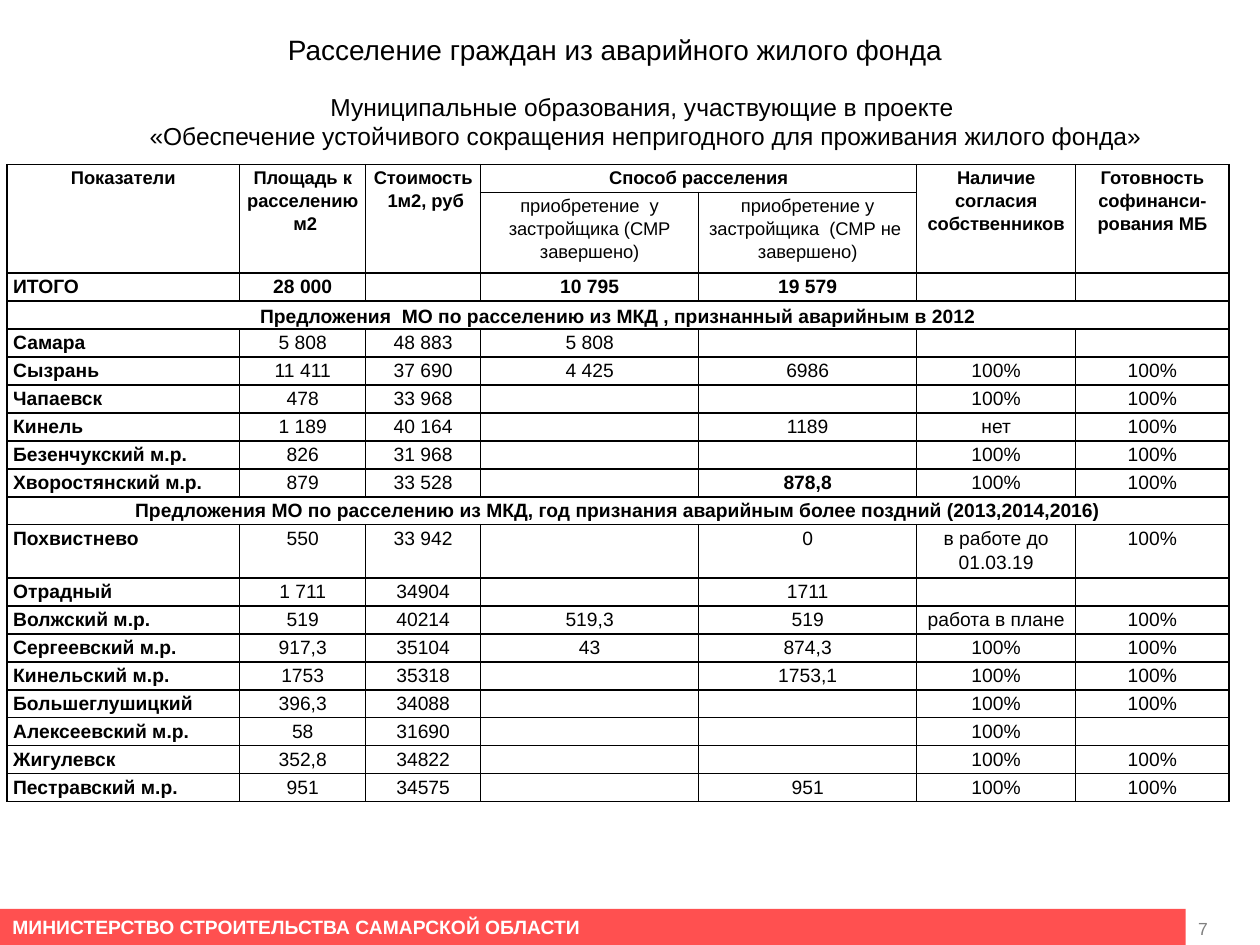
from typing import NamedTuple

from lxml.etree import SubElement
from pptx import Presentation
from pptx.dml.color import RGBColor
from pptx.enum.shapes import MSO_SHAPE
from pptx.enum.text import MSO_ANCHOR, PP_ALIGN
from pptx.oxml.ns import qn
from pptx.util import Pt

COLORS = {"text": "000000", "banner": "FF5050", "light": "FFFFFF", "number": "808080"}
FONT = "Arial"
COLUMN_WIDTHS = [133.1, 72, 65.7, 124.6, 124.6, 90.8, 87.8]
ROW_HEIGHT = 16


class Row(NamedTuple):
    values: list[str]
    height: float = ROW_HEIGHT
    size: float = 11
    bold_columns: tuple[int, ...] = (0,)
    section: bool = False
    anchor: MSO_ANCHOR = MSO_ANCHOR.TOP


ALL_COLUMNS = tuple(range(len(COLUMN_WIDTHS)))


def section(title: str, anchor: MSO_ANCHOR = MSO_ANCHOR.TOP) -> Row:
    return Row([title] + [""] * 6, section=True, anchor=anchor)


ROWS = [
    Row(["Показатели", "Площадь к расселению  м2", "Стоимость  1м2, руб", "Способ расселения", "",
         "Наличие согласия собственников", "Готовность софинанси-рования МБ"],
        size=10.5, bold_columns=ALL_COLUMNS),
    Row(["", "", "", "приобретение  у застройщика (СМР завершено)",
         "приобретение у застройщика  (СМР не  завершено)", "", ""], height=46, size=10.5),
    Row(["ИТОГО", "28 000", "", "10 795", "19 579", "", ""], bold_columns=ALL_COLUMNS),
    section("Предложения  МО по расселению из МКД , признанный аварийным в 2012", MSO_ANCHOR.MIDDLE),
    Row(["Самара", "5 808", "48 883", "5 808", "", "", ""]),
    Row(["Сызрань", "11 411", "37 690", "4 425", "6986", "100%", "100%"]),
    Row(["Чапаевск", "478", "33 968", "", "", "100%", "100%"]),
    Row(["Кинель", "1 189", "40 164", "", "1189", "нет", "100%"]),
    Row(["Безенчукский м.р.", "826", "31 968", "", "", "100%", "100%"]),
    Row(["Хворостянский м.р.", "879", "33 528", "", "878,8", "100%", "100%"], bold_columns=(0, 4)),
    section("Предложения МО по расселению из МКД, год признания аварийным более поздний (2013,2014,2016)"),
    Row(["Похвистнево", "550", "33 942", "", "0", "в работе до 01.03.19", "100%"], height=30.3),
    Row(["Отрадный", "1 711", "34904", "", "1711", "", ""]),
    Row(["Волжский м.р.", "519", "40214", "519,3", "519", "работа в плане", "100%"]),
    Row(["Сергеевский м.р.", "917,3", "35104", "43", "874,3", "100%", "100%"]),
    Row(["Кинельский м.р.", "1753", "35318", "", "1753,1", "100%", "100%"]),
    Row(["Большеглушицкий", "396,3", "34088", "", "", "100%", "100%"]),
    Row(["Алексеевский м.р.", "58", "31690", "", "", "100%", ""]),
    Row(["Жигулевск", "352,8", "34822", "", "", "100%", "100%"]),
    Row(["Пестравский м.р.", "951", "34575", "", "951", "100%", "100%"]),
]


def style_paragraph(paragraph, size: float, color: str = "text", bold: bool = False,
                    align: PP_ALIGN = PP_ALIGN.LEFT) -> None:
    paragraph.alignment = align
    font = paragraph.font
    font.name = FONT
    font.size = Pt(size)
    font.bold = bold
    font.color.rgb = RGBColor.from_string(COLORS[color])


def fill_frame(frame, lines: list[str], size: float, color: str = "text", bold: bool = False,
               align: PP_ALIGN = PP_ALIGN.LEFT, anchor: MSO_ANCHOR = MSO_ANCHOR.TOP,
               wrap: bool = True) -> None:
    frame.word_wrap = wrap
    frame.vertical_anchor = anchor
    frame.text = "\n".join(lines)
    for paragraph in frame.paragraphs:
        style_paragraph(paragraph, size, color, bold, align)


def add_borders(cell) -> None:
    properties = cell._tc.get_or_add_tcPr()
    for side in ("a:lnL", "a:lnR", "a:lnT", "a:lnB"):
        line = SubElement(properties, qn(side), w=str(Pt(1)))
        SubElement(SubElement(line, qn("a:solidFill")), qn("a:srgbClr"), val=COLORS["text"])


def draw_cell(cell, row: Row, column: int) -> None:
    add_borders(cell)
    cell.fill.background()
    cell.margin_left = cell.margin_right = Pt(3.6)
    cell.margin_top = cell.margin_bottom = 0
    cell.vertical_anchor = row.anchor
    cell.text = row.values[column]
    paragraph = cell.text_frame.paragraphs[0]
    paragraph.line_spacing = 1.15
    left = column == 0 and not row.section and row.size == 11
    style_paragraph(paragraph, row.size, bold=column in row.bold_columns,
                    align=PP_ALIGN.LEFT if left else PP_ALIGN.CENTER)
    if not row.values[column]:
        paragraph._p.get_or_add_endParaRPr().set("sz", str(int(row.size * 100)))


def draw_table(page) -> None:
    frame = page.shapes.add_table(len(ROWS), len(COLUMN_WIDTHS), Pt(3.9), Pt(94),
                                  Pt(sum(COLUMN_WIDTHS)), Pt(sum(row.height for row in ROWS)))
    table = frame.table
    table.first_row = table.horz_banding = False
    for column, width in zip(table.columns, COLUMN_WIDTHS):
        column.width = Pt(width)
    for index, row in enumerate(ROWS):
        table.rows[index].height = Pt(row.height)
        for column in ALL_COLUMNS:
            draw_cell(table.cell(index, column), row, column)
        if row.section:
            table.cell(index, 0).merge(table.cell(index, ALL_COLUMNS[-1]))
    for column in (0, 1, 2, 5, 6):
        table.cell(0, column).merge(table.cell(1, column))
    table.cell(0, 3).merge(table.cell(0, 4))


def main() -> None:
    deck = Presentation()
    deck.slide_width, deck.slide_height = Pt(720), Pt(540)
    page = deck.slides.add_slide(deck.slide_layouts[5])

    title = page.shapes.title
    title.left, title.top, title.width, title.height = Pt(0), Pt(15), Pt(703), Pt(27)
    fill_frame(title.text_frame, ["Расселение граждан из аварийного жилого фонда"], 16,
               align=PP_ALIGN.CENTER)

    number = page.shapes.add_textbox(Pt(677.5), Pt(511), Pt(40), Pt(29))
    fill_frame(number.text_frame, ["7"], 10, "number", anchor=MSO_ANCHOR.BOTTOM)

    banner = page.shapes.add_shape(MSO_SHAPE.RECTANGLE, Pt(0), Pt(519.4), Pt(677.5), Pt(20.6))
    banner.shadow.inherit = False
    banner.fill.solid()
    banner.fill.fore_color.rgb = RGBColor.from_string(COLORS["banner"])
    banner.line.fill.background()
    fill_frame(banner.text_frame, ["МИНИСТЕРСТВО СТРОИТЕЛЬСТВА САМАРСКОЙ ОБЛАСТИ"], 11, "light",
               bold=True, anchor=MSO_ANCHOR.MIDDLE)

    subtitle = page.shapes.add_textbox(Pt(76.3), Pt(49), Pt(585.4), Pt(41))
    fill_frame(subtitle.text_frame,
               ["Муниципальные образования, участвующие в проекте ",
                "«Обеспечение устойчивого сокращения непригодного для проживания жилого фонда»"],
               14, align=PP_ALIGN.CENTER, wrap=False)

    draw_table(page)
    deck.save("out.pptx")


if __name__ == "__main__":
    main()
